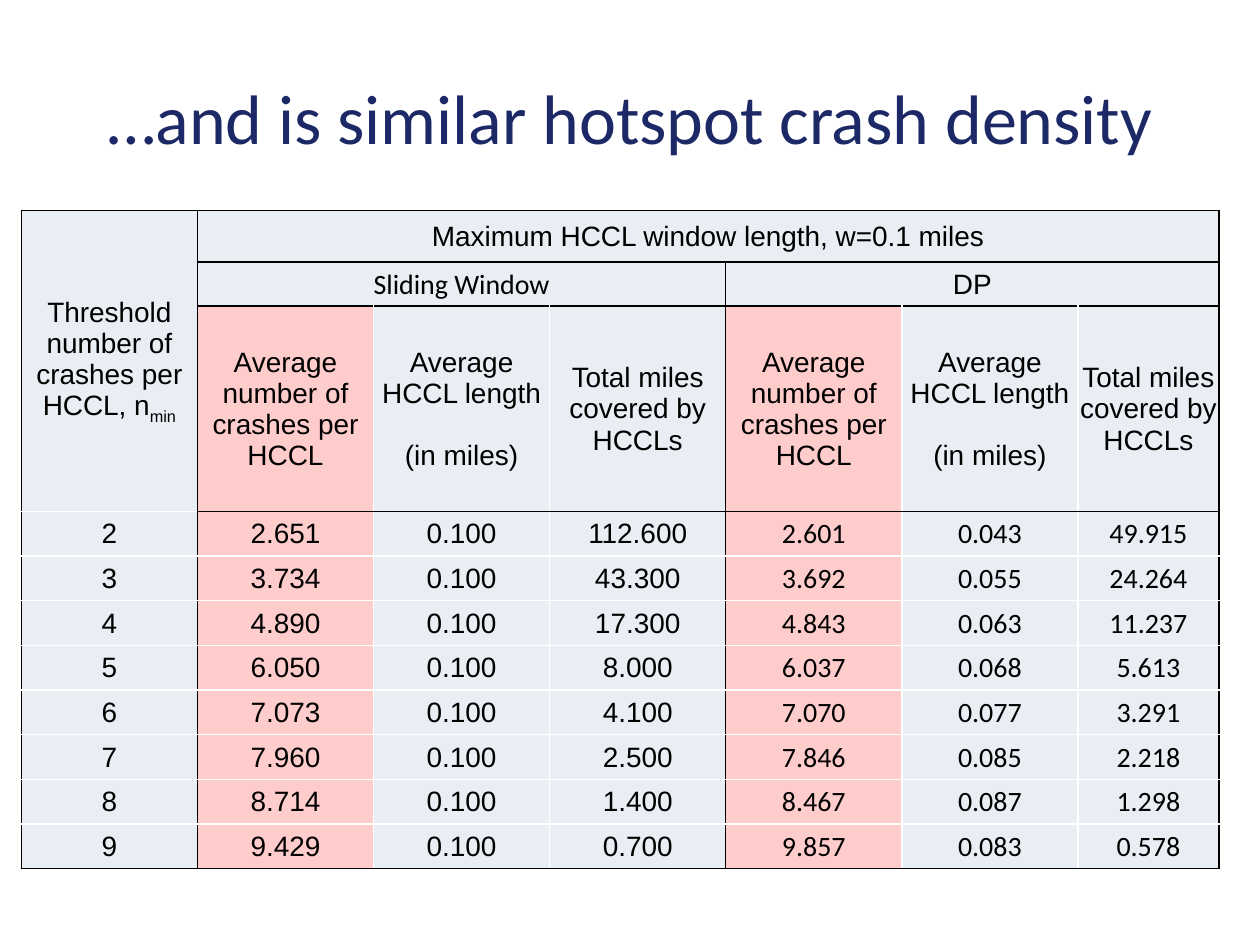
from lxml import etree
from pptx import Presentation
from pptx import util as u
from pptx.dml.color import RGBColor
from pptx.enum import text
from pptx.oxml import ns

NAVY = RGBColor(0x1C, 0x29, 0x66)
BLACK = RGBColor(0, 0, 0)
WHITE = RGBColor(0xFF, 0xFF, 0xFF)
PALE_BLUE = RGBColor(0xE9, 0xED, 0xF4)
PINK = RGBColor(0xFF, 0xCC, 0xCC)

TITLE = "…and is similar hotspot crash density"
COLUMN_WIDTHS = [3.55] * 6 + [2.84]
ROW_HEIGHTS = [1.04, 0.89, 4.14] + [0.9] * 8
HIGHLIGHTED_COLUMNS = (1, 4)
GROUP_STARTS = (0, 1, 4)
GROUP_ENDS = (0, 3, 6)
HEADER_ROWS = 3
FIRST_DP_COLUMN = 4
MEASURES = [
    "Average number of crashes per HCCL",
    "Average HCCL length\n(in miles)",
    "Total miles covered by HCCLs",
]
RESULTS = [
    ["2", "2.651", "0.100", "112.600", "2.601", "0.043", "49.915"],
    ["3", "3.734", "0.100", "43.300", "3.692", "0.055", "24.264"],
    ["4", "4.890", "0.100", "17.300", "4.843", "0.063", "11.237"],
    ["5", "6.050", "0.100", "8.000", "6.037", "0.068", "5.613"],
    ["6", "7.073", "0.100", "4.100", "7.070", "0.077", "3.291"],
    ["7", "7.960", "0.100", "2.500", "7.846", "0.085", "2.218"],
    ["8", "8.714", "0.100", "1.400", "8.467", "0.087", "1.298"],
    ["9", "9.429", "0.100", "0.700", "9.857", "0.083", "0.578"],
]


def add_text(paragraph, content, font="Arial", size=16, color=BLACK, baseline=None):
    """Append a formatted run to a centred paragraph."""
    paragraph.alignment = text.PP_ALIGN.CENTER
    run = paragraph.add_run()
    run.text = content
    run.font.name = font
    run.font.size = u.Pt(size)
    run.font.color.rgb = color
    if baseline is not None:
        run.font._element.set("baseline", str(baseline * 1000))


def set_borders(cell, **colors):
    """Draw one-point cell borders; sides are L, R, T and B."""
    properties = cell._tc.get_or_add_tcPr()
    for side, color in colors.items():
        line = etree.SubElement(properties, ns.qn(f"a:ln{side}"), w=str(u.Pt(1)))
        fill = etree.SubElement(line, ns.qn("a:solidFill"))
        etree.SubElement(fill, ns.qn("a:srgbClr"), val=str(color))


def format_cell(cell, row, column):
    """Set the borders, fill, margins and anchor of a cell from its place."""
    last_row = row + max(cell.span_height, 1) - 1
    last_column = column + max(cell.span_width, 1) - 1
    heading_rule = column > 0
    dark = {
        "L": column in GROUP_STARTS,
        "R": last_column in GROUP_ENDS,
        "T": row == 0 or (heading_rule and row <= HEADER_ROWS),
        "B": last_row == len(ROW_HEIGHTS) - 1 or (heading_rule and last_row < HEADER_ROWS),
    }
    set_borders(cell, **{side: BLACK if on else WHITE for side, on in dark.items()})
    highlighted = column in HIGHLIGHTED_COLUMNS and row >= HEADER_ROWS - 1
    cell.fill.solid()
    cell.fill.fore_color.rgb = PINK if highlighted else PALE_BLUE
    cell.margin_left = cell.margin_right = cell.margin_top = u.Cm(0.02)
    cell.margin_bottom = 0
    cell.vertical_anchor = text.MSO_ANCHOR.MIDDLE


def fill_headings(table):
    """Merge and write the three heading rows."""
    table.cell(0, 0).merge(table.cell(2, 0))
    table.cell(0, 1).merge(table.cell(0, 6))
    threshold = table.cell(0, 0).text_frame.paragraphs[0]
    add_text(threshold, "Threshold number of crashes per HCCL, n")
    add_text(threshold, "min", baseline=-25)
    add_text(table.cell(0, 1).text_frame.paragraphs[0],
             "Maximum HCCL window length, w=0.1 miles")
    for start, method, font in ((1, "Sliding Window", "Calibri"), (4, "DP", "Arial")):
        table.cell(1, start).merge(table.cell(1, start + 2))
        add_text(table.cell(1, start).text_frame.paragraphs[0], method, font=font)
        for column, measure in enumerate(MEASURES, start):
            frame = table.cell(2, column).text_frame
            first, *others = measure.split("\n")
            add_text(frame.paragraphs[0], first)
            for line in others:
                paragraph = frame.add_paragraph()
                paragraph.space_before = u.Pt(18)
                add_text(paragraph, line)


def add_results_table(slide, left, top):
    """Build the crash results table at the given corner."""
    frame = slide.shapes.add_table(
        len(ROW_HEIGHTS), len(COLUMN_WIDTHS), left, top,
        u.Cm(sum(COLUMN_WIDTHS)), u.Cm(sum(ROW_HEIGHTS)))
    table = frame.table
    table.first_row = table.horz_banding = False
    for column, width in zip(table.columns, COLUMN_WIDTHS):
        column.width = u.Cm(width)
    for row, height in zip(table.rows, ROW_HEIGHTS):
        row.height = u.Cm(height)
    fill_headings(table)
    for row, values in enumerate(RESULTS, HEADER_ROWS):
        for column, value in enumerate(values):
            font = "Calibri" if column >= FIRST_DP_COLUMN else "Arial"
            add_text(table.cell(row, column).text_frame.paragraphs[0], value, font=font)
    for row in range(len(ROW_HEIGHTS)):
        for column in range(len(COLUMN_WIDTHS)):
            cell = table.cell(row, column)
            if not cell.is_spanned:
                format_cell(cell, row, column)


def add_title(slide, left, top, width, height):
    """Place and write the slide title."""
    title = slide.shapes.title
    title.left, title.top, title.width, title.height = left, top, width, height
    title.text_frame.vertical_anchor = text.MSO_ANCHOR.MIDDLE
    add_text(title.text_frame.paragraphs[0], TITLE, font="Calibri", size=40, color=NAVY)


def main():
    """Create the presentation and save it."""
    presentation = Presentation()
    presentation.slide_width = u.Cm(25.4)
    presentation.slide_height = u.Cm(19.05)
    slide = presentation.slides.add_slide(presentation.slide_layouts[5])
    add_title(slide, u.Cm(1.27), u.Cm(0.76), u.Cm(22.86), u.Cm(3.18))
    add_results_table(slide, u.Cm(0.43), u.Cm(4.24))
    presentation.save("out.pptx")


if __name__ == "__main__":
    main()
